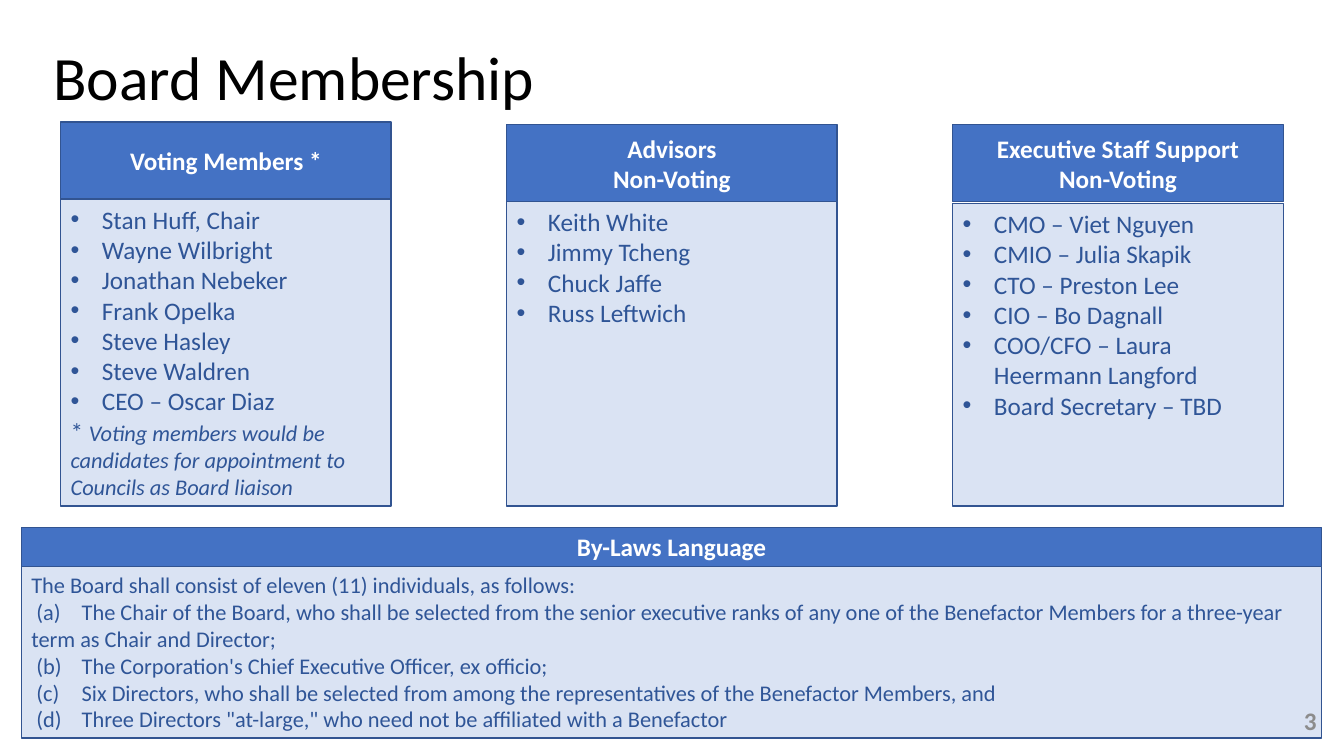
from lxml import etree
from pptx import Presentation
from pptx import util as u
from pptx.dml.color import RGBColor
from pptx.enum import shapes, text
from pptx.oxml import ns

FONT = "Calibri"
HUES = {"head": "4472C4", "body": "DAE3F3", "line": "325491",
        "ink": "2F5597", "white": "FFFFFF", "black": "000000", "gray": "8C8C8C"}

# Column panels: top, gap under the header, header, names, footnote
COLS = [
    (3.08, 0, "Voting Members *",
     ["Stan Huff, Chair", "Wayne Wilbright", "Jonathan Nebeker", "Frank Opelka",
      "Steve Hasley", "Steve Waldren", "CEO – Oscar Diaz"],
     "Voting members would be candidates for appointment to Councils as Board liaison"),
    (3.14, 0, "Advisors\nNon-Voting",
     ["Keith White", "Jimmy Tcheng", "Chuck Jaffe", "Russ Leftwich"], None),
    (3.14, 0.05, "Executive Staff Support\nNon-Voting",
     ["CMO – Viet Nguyen", "CMIO – Julia Skapik", "CTO – Preston Lee",
      "CIO – Bo Dagnall", "COO/CFO – Laura Heermann Langford",
      "Board Secretary – TBD"], None),
]
INTRO = "The Board shall consist of eleven (11) individuals, as follows:"
LAWS = [
    "The Chair of the Board, who shall be selected from the senior executive ranks "
    "of any one of the Benefactor Members for a three-year term as Chair and Director;",
    "The Corporation's Chief Executive Officer, ex officio;",
    "Six Directors, who shall be selected from among the representatives "
    "of the Benefactor Members, and",
    "Three Directors \"at-large,\" who need not be affiliated with a Benefactor",
]


def style(para, size, hue, bold=False):
    for run in para.runs:
        font = run.font
        font.name, font.size, font.bold = FONT, u.Pt(size), bold
        font.color.rgb = RGBColor.from_string(HUES[hue])


def indent(para, left, first):
    props = para._p.get_or_add_pPr()
    props.set("marL", str(u.Cm(left)))
    props.set("indent", str(u.Cm(first)))
    return props


def bullet(para):
    props = indent(para, 0.79, -0.79)
    etree.SubElement(props, ns.qn("a:buFont")).set("typeface", "Arial")
    etree.SubElement(props, ns.qn("a:buChar")).set("char", "•")


def tab(para, stop):
    tabs = etree.SubElement(indent(para, 0, 0.13), ns.qn("a:tabLst"))
    mark = etree.SubElement(tabs, ns.qn("a:tab"))
    mark.set("pos", str(u.Cm(stop)))
    mark.set("algn", "l")


def block(slide, box, fill, lines, size, hue, bold=False):
    """Outlined rectangle with one paragraph per line."""
    shape = slide.shapes.add_shape(shapes.MSO_SHAPE.RECTANGLE, *map(u.Cm, box))
    shape.shadow.inherit = False
    shape.fill.solid()
    shape.fill.fore_color.rgb = RGBColor.from_string(HUES[fill])
    shape.line.color.rgb = RGBColor.from_string(HUES["line"])
    shape.line.width = u.Pt(1)
    frame = shape.text_frame
    frame.word_wrap = True
    frame.text = "\n".join(lines)
    is_head = fill == "head"
    frame.vertical_anchor = text.MSO_ANCHOR.MIDDLE if is_head else text.MSO_ANCHOR.TOP
    for para in frame.paragraphs:
        para.alignment = text.PP_ALIGN.CENTER if is_head else text.PP_ALIGN.LEFT
        style(para, size, hue, bold)
    return frame


def panel(slide, box, split, gap, head, lines, size):
    """Header bar over a body; returns the body's text frame."""
    left, top, width, height = box
    block(slide, (left, top, width, split), "head", head.split("\n"), 18, "white", True)
    drop = split + gap
    return block(slide, (left, top + drop, width, height - drop),
                 "body", lines, size, "ink")


def column(slide, box, gap, head, names, note):
    frame = panel(slide, box, 1.94, gap, head, names, 18)
    for para in frame.paragraphs:
        bullet(para)
    if note:
        para = frame.add_paragraph()
        para.text = "* "
        para.alignment = text.PP_ALIGN.LEFT
        run = para.add_run()
        run.text = note
        style(para, 18, "ink")
        run.font.size, run.font.italic = u.Pt(16), True


def bylaws(slide, box):
    items = [f"({key})\t{law}" for key, law in zip("abcd", LAWS)]
    frame = panel(slide, box, 0.98, 0, "By-Laws Language", [INTRO] + items, 16)
    for para in frame.paragraphs[1:]:
        tab(para, 1.27)


def title(slide, box):
    shape = slide.shapes.title
    shape.left, shape.top, shape.width, shape.height = map(u.Cm, box)
    frame = shape.text_frame
    frame.text = "Board Membership"
    frame.vertical_anchor = text.MSO_ANCHOR.MIDDLE
    para = frame.paragraphs[0]
    para.alignment, para.line_spacing = text.PP_ALIGN.LEFT, 0.9
    style(para, 44, "black")


def number(slide, box):
    frame = slide.shapes.add_textbox(*map(u.Cm, box)).text_frame
    frame.word_wrap = True
    frame.text = "3"
    frame.vertical_anchor = text.MSO_ANCHOR.MIDDLE
    para = frame.paragraphs[0]
    para.alignment = text.PP_ALIGN.RIGHT
    style(para, 18, "gray", True)


def main():
    deck = Presentation()
    deck.slide_width, deck.slide_height = u.Cm(33.87), u.Cm(19.05)
    slide = deck.slides.add_slide(deck.slide_layouts[5])
    title(slide, (1.09, 0.2, 29.21, 3.68))
    # Three columns share one pitch and one bottom edge
    for i, (top, gap, head, names, note) in enumerate(COLS):
        box = (1.53 + 11.24 * i, top, 8.33, 12.75 - top)
        column(slide, box, gap, head, names, note)
    bylaws(slide, (0.54, 13.29, 32.77, 5.31))
    number(slide, (25.81, 17.65, 7.62, 1.02))
    deck.save("out.pptx")


if __name__ == "__main__":
    main()
